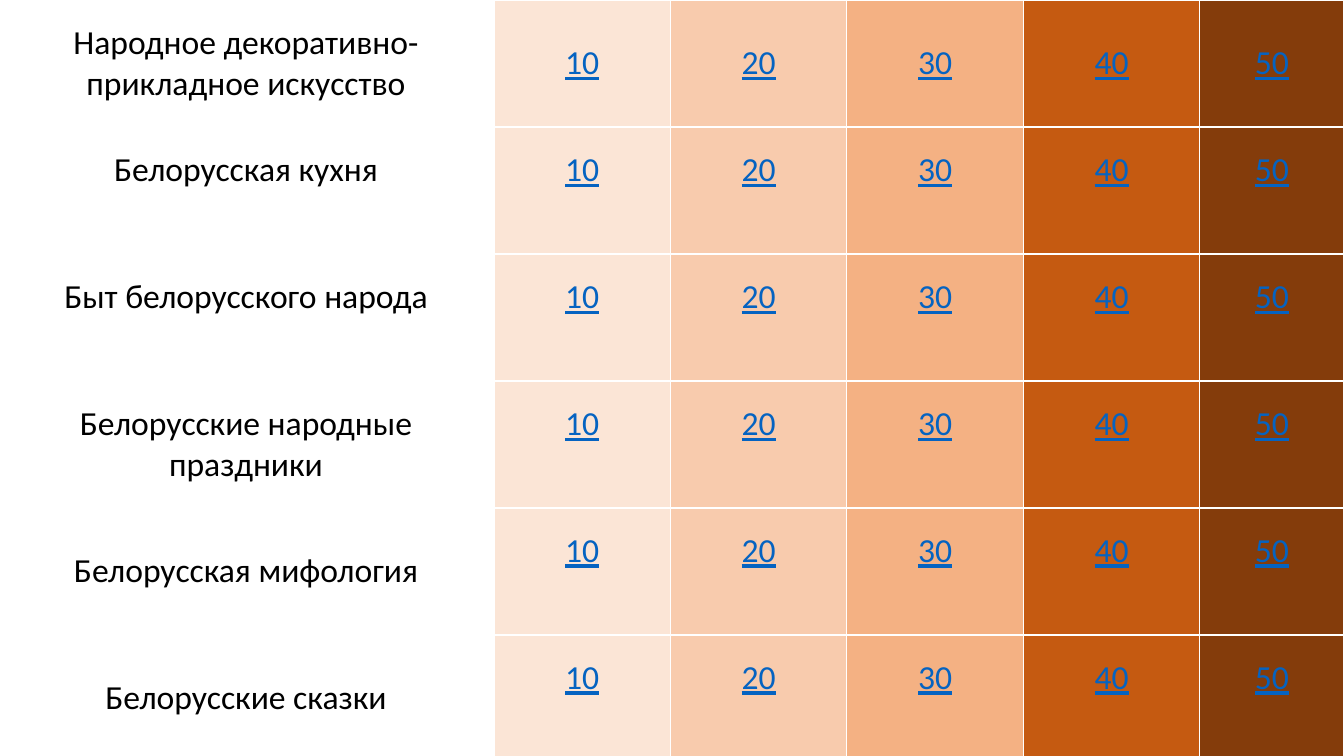
from dataclasses import dataclass

from lxml.etree import SubElement
from pptx import Presentation
from pptx.dml.color import RGBColor
from pptx.enum.text import MSO_ANCHOR as Anchor, PP_ALIGN as Align
from pptx.oxml.ns import qn
from pptx.table import _Cell as Cell
from pptx.util import Inches, Pt

COLORS = {
    "white": "FFFFFF",
    "topic": "000000",
    "points": "0563C1",
    "level10": "FBE5D6",
    "level20": "F8CBAD",
    "level30": "F4B183",
    "level40": "C55A11",
    "level50": "843C0B",
}
ROW_HEIGHT = 1.26
TOPIC_WIDTH = 4.92
EDGE_MARGIN = 0.05
RAISED_MARGIN = 0.45


@dataclass
class Topic:
    name: str
    name_raised: bool = False
    points_raised: bool = True


@dataclass
class Level:
    points: int
    width: float = 1.75


TOPICS = [
    Topic("Народное декоративно-прикладное искусство", points_raised=False),
    Topic("Белорусская кухня", name_raised=True),
    Topic("Быт белорусского народа", name_raised=True),
    Topic("Белорусские народные праздники"),
    Topic("Белорусская мифология"),
    Topic("Белорусские сказки"),
]
LEVELS = [Level(10), Level(20), Level(30), Level(40), Level(50, 1.43)]


def add_borders(cell: Cell) -> None:
    properties = cell._tc.get_or_add_tcPr()
    for side in ("a:lnL", "a:lnR", "a:lnT", "a:lnB"):
        border = SubElement(properties, qn(side), w=str(Pt(1)))
        border_fill = SubElement(border, qn("a:solidFill"))
        SubElement(border_fill, qn("a:srgbClr"), val=COLORS["white"])


def fill_cell(cell: Cell, text: str, background: str, color: str,
              raised: bool, underline: bool = False) -> None:
    add_borders(cell)
    cell.fill.solid()
    cell.fill.fore_color.rgb = RGBColor.from_string(COLORS[background])
    cell.vertical_anchor = Anchor.MIDDLE
    cell.margin_bottom = Inches(RAISED_MARGIN if raised else EDGE_MARGIN)
    cell.text = text
    paragraph = cell.text_frame.paragraphs[0]
    paragraph.alignment = Align.CENTER
    paragraph.font.name = "Calibri"
    paragraph.font.size = Pt(24)
    paragraph.font.bold = False
    paragraph.font.underline = underline
    paragraph.font.color.rgb = RGBColor.from_string(COLORS[color])


def main() -> None:
    presentation = Presentation()
    presentation.slide_width = Inches(13.33)
    presentation.slide_height = Inches(7.5)
    slide = presentation.slides.add_slide(presentation.slide_layouts[6])

    widths = [TOPIC_WIDTH] + [level.width for level in LEVELS]
    board = slide.shapes.add_table(
        len(TOPICS), len(widths), Inches(-0.02), Inches(0),
        Inches(sum(widths)), Inches(ROW_HEIGHT * len(TOPICS))).table
    board.first_row = False
    board.horz_banding = False
    for column, width in zip(board.columns, widths):
        column.width = Inches(width)

    for row, topic in enumerate(TOPICS):
        board.rows[row].height = Inches(ROW_HEIGHT)
        fill_cell(board.cell(row, 0), topic.name, "white", "topic", topic.name_raised)
        for column, level in enumerate(LEVELS, start=1):
            fill_cell(board.cell(row, column), str(level.points), f"level{level.points}",
                      "points", topic.points_raised, underline=True)

    presentation.save("out.pptx")


if __name__ == "__main__":
    main()
